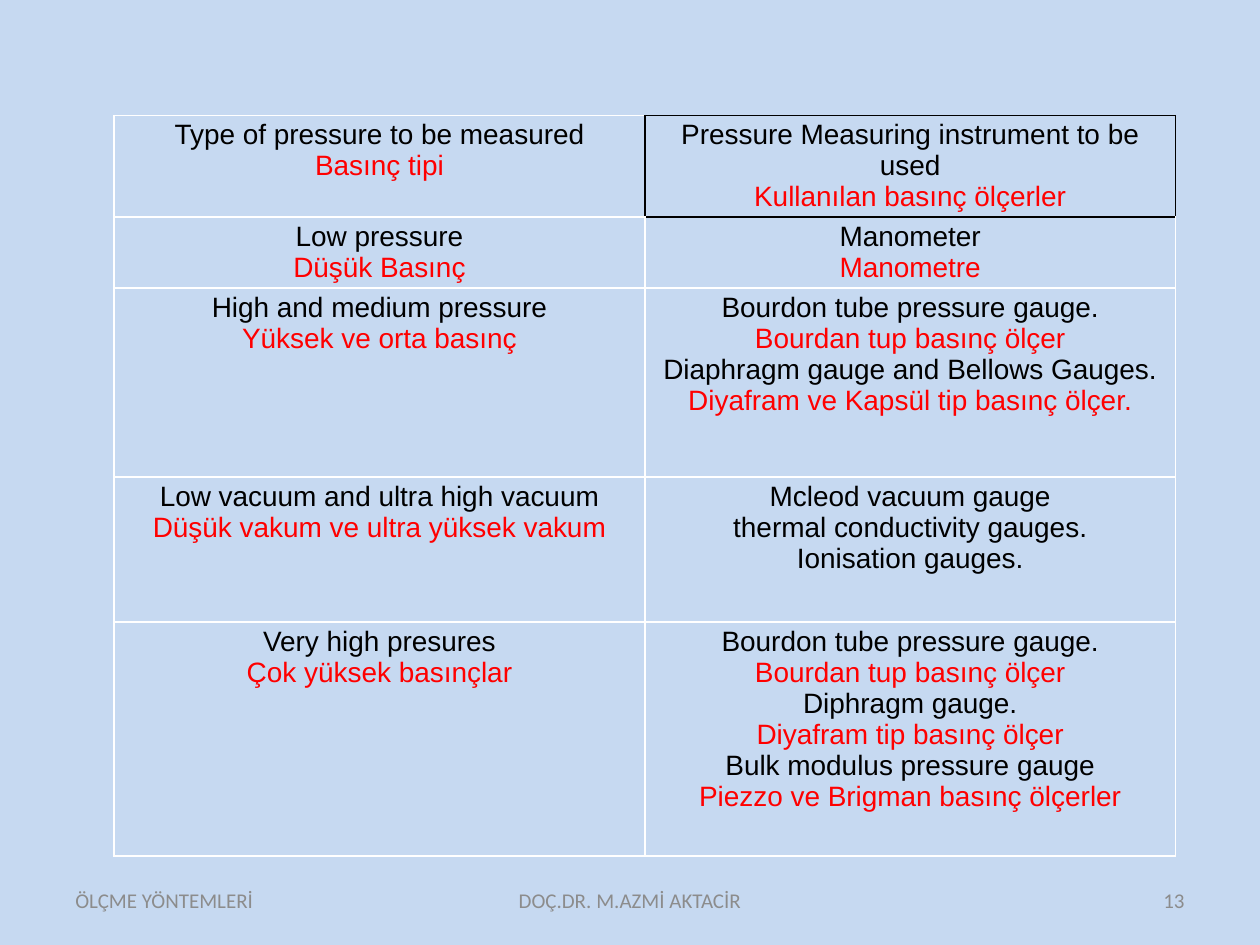
from dataclasses import dataclass

from lxml import etree
from pptx import Presentation
from pptx import util as u
from pptx.dml.color import RGBColor
from pptx.enum import text
from pptx.oxml.ns import qn

ALIGN = text.PP_ALIGN


@dataclass(frozen=True)
class Theme:
    back: str = "C6D9F1"
    ink: str = "000000"
    red: str = "FF0000"
    grey: str = "8C8C8C"
    line: str = "FFFFFF"
    body: tuple = ("Arial", 16)
    foot: tuple = ("Calibri", 12)


class Deck:
    def __init__(self, theme):
        self.theme = theme
        self.show = Presentation()
        self.show.slide_width, self.show.slide_height = u.Cm(25.4), u.Cm(19.05)
        self.slide = self.show.slides.add_slide(self.show.slide_layouts[6])
        fill = self.slide.background.fill
        fill.solid()
        fill.fore_color.rgb = RGBColor.from_string(theme.back)

    def words(self, frame, lines, font, align):
        """Fill a text frame with (colour, words) lines."""
        for i, (tone, line) in enumerate(lines):
            para = frame.add_paragraph() if i else frame.paragraphs[0]
            para.alignment = align
            run = para.add_run()
            run.text = line
            for key, val in {"name": font[0], "size": u.Pt(font[1])}.items():
                setattr(run.font, key, val)
            run.font.color.rgb = RGBColor.from_string(tone)

    def label(self, left, width, line, align):
        box = self.slide.shapes.add_textbox(
            u.Cm(left), u.Cm(17.65), u.Cm(width), u.Cm(1.01)
        )
        frame = box.text_frame
        form = {"word_wrap": True, "vertical_anchor": text.MSO_ANCHOR.MIDDLE}
        for key, val in form.items():
            setattr(frame, key, val)
        self.words(frame, [(self.theme.grey, line)], self.theme.foot, align)

    def edge(self, cell, **tones):
        """Draw the cell borders; sides named in tones leave the default."""
        props = cell._tc.get_or_add_tcPr()
        for i, side in enumerate("LRTB"):
            line = etree.Element(qn(f"a:ln{side}"), w=str(u.Pt(1)))
            fill = etree.SubElement(line, qn("a:solidFill"))
            tone = tones.get(side, self.theme.line)
            etree.SubElement(fill, qn("a:srgbClr"), val=tone)
            props.insert(i, line)

    def table(self, left, top, wide, highs, rows, edges):
        cols = len(rows[0])
        grid = self.slide.shapes.add_table(
            len(rows), cols, u.Cm(left), u.Cm(top), u.Cm(wide * cols), u.Cm(sum(highs))
        ).table
        grid.first_row = grid.horz_banding = False
        for col in grid.columns:
            col.width = u.Cm(wide)
        for r, (high, row) in enumerate(zip(highs, rows)):
            grid.rows[r].height = u.Cm(high)
            for c, lines in enumerate(row):
                cell = grid.cell(r, c)
                cell.fill.background()
                for side in ("left", "right", "top", "bottom"):
                    setattr(cell, f"margin_{side}", u.Cm(0.08))
                self.words(cell.text_frame, lines, self.theme.body, ALIGN.CENTER)
                self.edge(cell, **edges.get((r, c), {}))


def main():
    look = Theme()
    deck = Deck(look)
    ink, red = look.ink, look.red

    # Pressure types and their gauges
    tube = [(ink, "Bourdon tube pressure gauge."), (red, "Bourdan tup basınç ölçer")]
    rows = [
        ([(ink, "Type of pressure to be measured"), (red, "Basınç tipi")],
         [(ink, "Pressure Measuring instrument to be used"),
          (red, "Kullanılan basınç ölçerler")]),
        ([(ink, "Low pressure"), (red, "Düşük Basınç")],
         [(ink, "Manometer"), (red, "Manometre")]),
        ([(ink, "High and medium pressure"), (red, "Yüksek ve orta basınç")],
         tube + [(ink, "Diaphragm gauge and Bellows Gauges."),
                 (red, "Diyafram ve Kapsül tip basınç ölçer.")]),
        ([(ink, "Low vacuum and ultra high vacuum"),
          (red, "Düşük vakum ve ultra yüksek vakum")],
         [(ink, "Mcleod vacuum gauge"), (ink, "thermal conductivity gauges."),
          (ink, "Ionisation gauges.")]),
        ([(ink, "Very high presures"), (red, "Çok yüksek basınçlar")],
         tube + [(ink, "Diphragm gauge."), (red, "Diyafram tip basınç ölçer"),
                 (ink, "Bulk modulus pressure gauge"),
                 (red, "Piezzo ve Brigman basınç ölçerler")]),
    ]

    # The second heading is boxed in black, shared by its neighbours
    edges = {(0, 0): {"R": ink}, (0, 1): dict.fromkeys("LRTB", ink), (1, 1): {"T": ink}}
    deck.table(2.3, 2.33, 10.7, [2.05, 1.43, 3.81, 2.92, 4.72], rows, edges)

    # Footer
    deck.label(1.27, 5.93, "ÖLÇME YÖNTEMLERİ", ALIGN.LEFT)
    deck.label(8.68, 8.04, "DOÇ.DR. M.AZMİ AKTACİR", ALIGN.CENTER)
    deck.label(18.2, 5.93, "13", ALIGN.RIGHT)

    deck.show.save("out.pptx")


if __name__ == "__main__":
    main()
